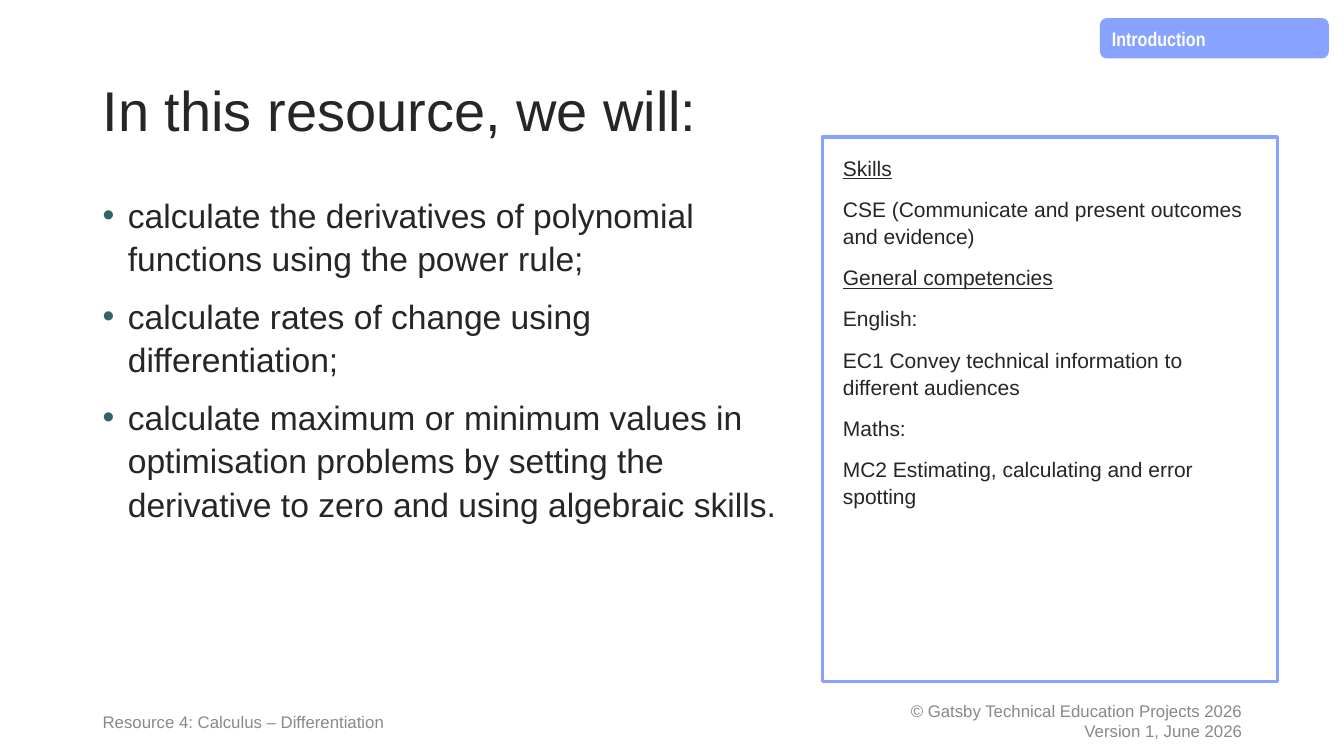
import pptx
import pptx.dml.color
import pptx.enum.shapes
import pptx.enum.text
import pptx.util
from dataclasses import dataclass
from lxml import etree
from pptx.util import Inches

ALIGN = pptx.enum.text.PP_ALIGN
ANCHOR = pptx.enum.text.MSO_ANCHOR
SHAPE = pptx.enum.shapes.MSO_SHAPE
DRAWING = "http://schemas.openxmlformats.org/drawingml/2006/main"


@dataclass(frozen=True)
class Theme:
    font: str = "Arial"
    tab_font: str = "Arial Narrow"
    ink: str = "262626"
    accent: str = "88A2FF"
    bullet: str = "326367"
    white: str = "FFFFFF"
    copyright: str = "888888"
    footer: str = "898989"
    title_size: int = 40
    body_size: int = 24
    panel_size: int = 15
    tab_size: int = 14
    footer_size: int = 12
    line_spacing: float = 1.08
    paragraph_gap: int = 10


THEME = Theme()

GOALS = [
    "calculate the derivatives of polynomial functions using the power rule;",
    "calculate rates of change using differentiation;",
    "calculate maximum or minimum values in optimisation problems by setting "
    "the derivative to zero and using algebraic skills.",
]
HEADINGS = ("Skills", "General competencies")
COMPETENCIES = [
    HEADINGS[0],
    "CSE (Communicate and present outcomes and evidence)",
    HEADINGS[1],
    "English:",
    "EC1 Convey technical information to different audiences",
    "Maths:",
    "MC2 Estimating, calculating and error spotting",
]
COPYRIGHT = ["© Gatsby Technical Education Projects 2026", "Version 1, June 2026"]


def rgb(value):
    return pptx.dml.color.RGBColor.from_string(value)


def add_bullet(paragraph):
    properties = paragraph._p.get_or_add_pPr()
    properties.set("marL", str(Inches(0.25)))
    properties.set("indent", str(Inches(-0.25)))
    color = etree.SubElement(properties, f"{{{DRAWING}}}buClr")
    etree.SubElement(color, f"{{{DRAWING}}}srgbClr", val=THEME.bullet)
    etree.SubElement(properties, f"{{{DRAWING}}}buFont", typeface=THEME.font)
    etree.SubElement(properties, f"{{{DRAWING}}}buChar", char="•")


def write_text(shape, lines, size, color, font=THEME.font, bold=False, align=ALIGN.LEFT,
               anchor=ANCHOR.TOP, spacing=THEME.line_spacing, gap=0,
               margins=(0.1, 0.05), bullets=False, underlined=()):
    frame = shape.text_frame
    frame.word_wrap = True
    frame.vertical_anchor = anchor
    frame.margin_left = frame.margin_right = Inches(margins[0])
    frame.margin_top = frame.margin_bottom = Inches(margins[1])
    for index, line in enumerate(lines):
        paragraph = frame.add_paragraph() if index else frame.paragraphs[0]
        paragraph.text = line
        if bullets:
            add_bullet(paragraph)
        paragraph.alignment = align
        paragraph.line_spacing = spacing
        paragraph.space_before = pptx.util.Pt(gap if index else 0)
        paragraph.font.name = font
        paragraph.font.size = pptx.util.Pt(size)
        paragraph.font.bold = bold
        paragraph.font.underline = line in underlined
        paragraph.font.color.rgb = rgb(color)


def add_text(slide, box, lines, size, color, **style):
    shape = slide.shapes.add_textbox(*map(Inches, box))
    write_text(shape, lines, size, color, **style)


def add_box(slide, kind, box, fill, line, lines, size, color, **style):
    shape = slide.shapes.add_shape(kind, *map(Inches, box))
    shape.shadow.inherit = False
    shape.fill.solid()
    shape.fill.fore_color.rgb = rgb(fill)
    if line:
        shape.line.color.rgb = rgb(line)
        shape.line.width = pptx.util.Pt(2.25)
    else:
        shape.line.fill.background()
    write_text(shape, lines, size, color, **style)


def main():
    presentation = pptx.Presentation()
    presentation.slide_width = Inches(13.33)
    presentation.slide_height = Inches(7.5)
    slide = presentation.slides.add_slide(presentation.slide_layouts[6])

    # Copyright
    add_text(slide, (7.92, 6.95, 4.5, 0.4), COPYRIGHT, THEME.footer_size,
             THEME.copyright, align=ALIGN.RIGHT, anchor=ANCHOR.MIDDLE, spacing=1.0)

    # Title and goals
    add_text(slide, (0.92, 0.4, 11.5, 1.45), ["In this resource, we will:"],
             THEME.title_size, THEME.ink, anchor=ANCHOR.MIDDLE, spacing=0.9)
    add_text(slide, (0.92, 1.85, 7, 4.76), GOALS, THEME.body_size, THEME.ink,
             gap=THEME.paragraph_gap, bullets=True)

    # Skills panel
    add_box(slide, SHAPE.RECTANGLE, (8.16, 1.36, 4.51, 5.4), THEME.white, THEME.accent,
            COMPETENCIES, THEME.panel_size, THEME.ink, gap=THEME.paragraph_gap,
            margins=(0.2, 0.16), underlined=HEADINGS)

    # Section tab
    add_box(slide, SHAPE.FLOWCHART_ALTERNATE_PROCESS, (10.91, 0.18, 2.27, 0.4),
            THEME.accent, None, ["Introduction"], THEME.tab_size, THEME.white,
            font=THEME.tab_font, bold=True)

    # Footer
    add_text(slide, (0.92, 6.95, 4.6, 0.4), ["Resource 4: Calculus – Differentiation"],
             THEME.footer_size, THEME.footer, anchor=ANCHOR.MIDDLE)

    presentation.save("out.pptx")


if __name__ == "__main__":
    main()
